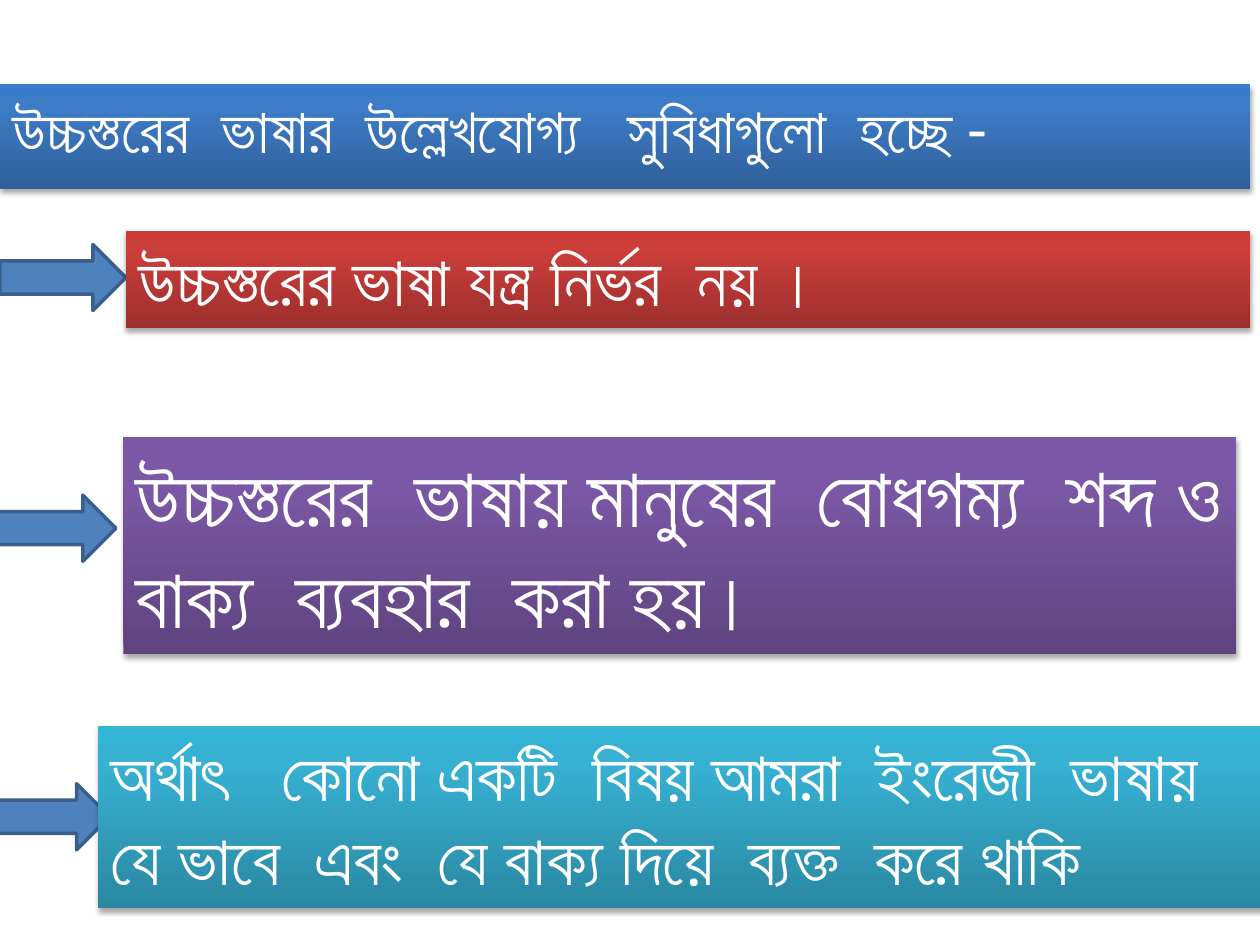
from dataclasses import dataclass

from lxml import etree
from copy import deepcopy
from pptx import Presentation
from pptx import util as u
from pptx.dml.color import RGBColor
from pptx.enum import shapes, text
from pptx.oxml import ns

WIDTH, HEIGHT = 10, 7.5
FONT = "Roboto"
WHITE, ARROW_FILL, ARROW_LINE = "FFFFFF", "4F81BD", "3A5F8C"
ARROW_HEIGHT = 0.07  # share of the slide's height
STOP_POSITIONS = (0, 0.8, 1)


@dataclass(frozen=True)
class Area:
    """Left, top, width and height as shares of the slide's size."""
    left: float
    top: float
    width: float
    height: float

    def place(self, shape) -> None:
        shape.left, shape.top, shape.width, shape.height = self.lengths()

    def lengths(self) -> tuple:
        return (u.Inches(self.left * WIDTH), u.Inches(self.top * HEIGHT),
                u.Inches(self.width * WIDTH), u.Inches(self.height * HEIGHT))


@dataclass(frozen=True)
class Banner:
    wording: str
    size: int
    area: Area
    gradient: tuple[str, str, str]  # from bottom to top


@dataclass(frozen=True)
class Advantage:
    banner: Banner
    arrow_left: float
    arrow_top: float
    arrow_width: float


HEADING = Banner("উচ্চস্তরের  ভাষার  উল্লেখযোগ্য   সুবিধাগুলো  হচ্ছে -", 36,
                 Area(0, 0.67 / HEIGHT, 0.992, 0.71 / HEIGHT),
                 ("2F5F99", "3D7CC7", "3A7CCB"))
ADVANTAGES = (
    Advantage(Banner("উচ্চস্তরের ভাষা যন্ত্র নির্ভর  নয় ।", 40,
                     Area(0.1, 1.83 / HEIGHT, 0.892, 0.77 / HEIGHT),
                     ("9C2F2D", "CB3E3A", "CE3B37")),
              0, 1.94 / HEIGHT, 0.1),
    Advantage(Banner("উচ্চস্তরের  ভাষায় মানুষের  বোধগম্য  শব্দ ও বাক্য  ব্যবহার  করা হয়।", 48,
                     Area(0.098, 3.47 / HEIGHT, 0.883, 1.72 / HEIGHT),
                     ("5F4480", "7B58A6", "7C57A8")),
              -0.003, 3.93 / HEIGHT, 0.095),
    Advantage(Banner("অর্থাৎ   কোনো একটি  বিষয় আমরা  ইংরেজী  ভাষায়  যে ভাবে  এবং  "
                     "যে বাক্য দিয়ে  ব্যক্ত  করে থাকি", 40,
                     Area(0.078, 5.76 / HEIGHT, 0.936, 1.45 / HEIGHT),
                     ("2A88A2", "37B1D2", "34B4D6")),
              -0.008, 6.22 / HEIGHT, 0.095),
)


def colour(value: str) -> RGBColor:
    return RGBColor.from_string(value)


def fill_upwards(shape, colours: tuple[str, ...]) -> None:
    shape.fill.gradient()
    shape.fill.gradient_angle = 90
    stop_list = shape._element.spPr.find(".//" + ns.qn("a:gsLst"))
    stop_list.append(deepcopy(stop_list[-1]))
    for stop, position, value in zip(shape.fill.gradient_stops, STOP_POSITIONS, colours):
        stop.position = position
        stop.color.rgb = colour(value)


def cast_shadow(shape) -> None:
    shape.shadow.inherit = False
    effects = shape._element.spPr.find(ns.qn("a:effectLst"))
    shadow = etree.SubElement(effects, ns.qn("a:outerShdw"), blurRad=str(u.Pt(3.1)),
                              dist=str(u.Pt(1.8)), dir="5400000", rotWithShape="0")
    black = etree.SubElement(shadow, ns.qn("a:srgbClr"), val="000000")
    etree.SubElement(black, ns.qn("a:alpha"), val="35000")


def format_banner(shape, banner: Banner) -> None:
    banner.area.place(shape)
    fill_upwards(shape, banner.gradient)
    shape.line.fill.background()
    cast_shadow(shape)
    frame = shape.text_frame
    frame.word_wrap = True
    frame.auto_size = text.MSO_AUTO_SIZE.SHAPE_TO_FIT_TEXT
    frame.vertical_anchor = text.MSO_ANCHOR.TOP
    paragraph = frame.paragraphs[0]
    paragraph.alignment = text.PP_ALIGN.LEFT
    run = paragraph.add_run()
    run.text = banner.wording
    run.font.name = FONT
    run.font.size = u.Pt(banner.size)
    run.font.color.rgb = colour(WHITE)


def draw_advantage(slide, advantage: Advantage) -> None:
    area = Area(advantage.arrow_left, advantage.arrow_top, advantage.arrow_width, ARROW_HEIGHT)
    arrow = slide.shapes.add_shape(shapes.MSO_SHAPE.RIGHT_ARROW, *area.lengths())
    arrow.shadow.inherit = False
    arrow.fill.solid()
    arrow.fill.fore_color.rgb = colour(ARROW_FILL)
    arrow.line.color.rgb = colour(ARROW_LINE)
    arrow.line.width = u.Pt(2)
    box = slide.shapes.add_shape(shapes.MSO_SHAPE.RECTANGLE, *advantage.banner.area.lengths())
    format_banner(box, advantage.banner)


def main() -> None:
    presentation = Presentation()
    presentation.slide_width = u.Inches(WIDTH)
    presentation.slide_height = u.Inches(HEIGHT)
    slide = presentation.slides.add_slide(presentation.slide_layouts.get_by_name("Title Only"))
    format_banner(slide.shapes.title, HEADING)
    for advantage in ADVANTAGES:
        draw_advantage(slide, advantage)
    presentation.save("out.pptx")


if __name__ == "__main__":
    main()
